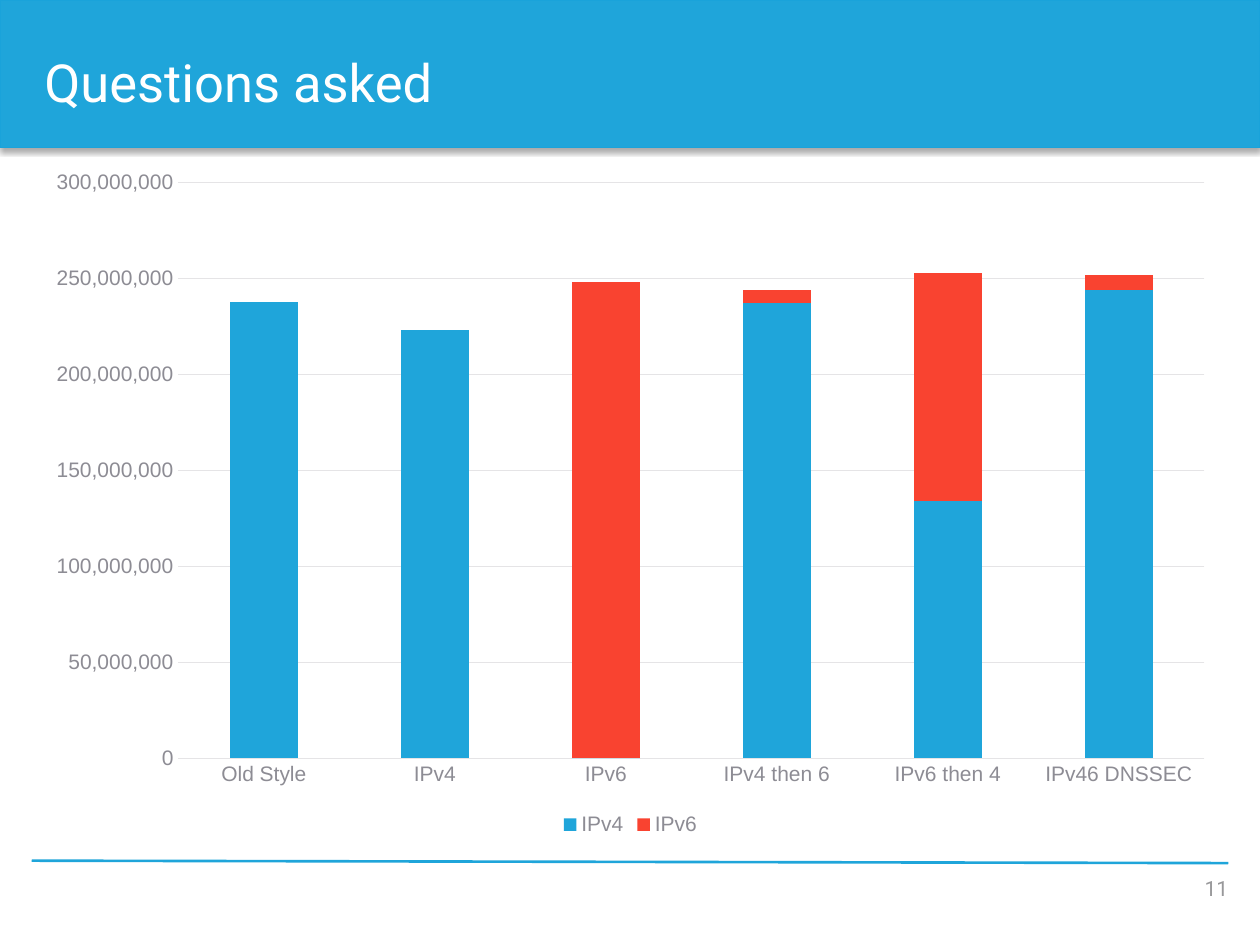
from dataclasses import dataclass

from lxml import etree
from pptx import Presentation
from pptx import util as u
from pptx.chart.data import CategoryChartData
from pptx.dml.color import RGBColor
from pptx.enum import chart as charts, shapes, text
from pptx.oxml import parse_xml
from pptx.oxml.ns import nsdecls, qn


@dataclass(frozen=True)
class Theme:
    blue: RGBColor = RGBColor.from_string("1FA5DA")
    band_edge: RGBColor = RGBColor.from_string("1AA3DA")
    red: RGBColor = RGBColor.from_string("F94330")
    white: RGBColor = RGBColor.from_string("FFFFFF")
    label: RGBColor = RGBColor.from_string("8D8C94")
    grid: RGBColor = RGBColor.from_string("E5E4E6")
    number: RGBColor = RGBColor.from_string("98989A")
    title_size: u.Pt = u.Pt(30)
    small_size: u.Pt = u.Pt(12)
    text_font: str = "Roboto"
    chart_font: str = "Arial"
    thin: u.Pt = u.Pt(0.75)
    rule: u.Pt = u.Pt(1.5)


class SlideBuilder:
    """Holds the theme and the slide being filled; lengths are in centimetres."""

    def __init__(self, slide, theme):
        self.slide = slide
        self.theme = theme

    def style_font(self, font, size, color, name):
        font.size, font.name, font.bold = size, name, False
        font.color.rgb = color

    def style_line(self, line, color, width):
        line.color.rgb = color
        line.width = width

    def band(self, left, top, width, height):
        """Draw the header band with its soft shadow, behind everything else."""
        band = self.slide.shapes.add_shape(
            shapes.MSO_SHAPE.RECTANGLE, *map(u.Cm, (left, top, width, height)))
        band.fill.solid()
        band.fill.fore_color.rgb = self.theme.blue
        self.style_line(band.line, self.theme.band_edge, self.theme.thin)
        band._element.spPr.append(parse_xml(
            f'<a:effectLst {nsdecls("a")}>'
            f'<a:outerShdw blurRad="{u.Pt(3.1)}" dist="{u.Pt(1.8)}" dir="5400000" '
            'algn="t" rotWithShape="0"><a:srgbClr val="000000">'
            '<a:alpha val="35000"/></a:srgbClr></a:outerShdw></a:effectLst>'))
        self.slide.shapes._spTree.insert(2, band._element)

    def rule(self, left, top, right, bottom):
        rule = self.slide.shapes.add_connector(
            shapes.MSO_CONNECTOR.STRAIGHT, *map(u.Cm, (left, top, right, bottom)))
        self.style_line(rule.line, self.theme.blue, self.theme.rule)
        etree.SubElement(rule._element.spPr, qn("a:effectLst"))

    def title(self, words, left, top, width, height):
        title = self.slide.shapes.title
        title.left, title.top, title.width, title.height = map(
            u.Cm, (left, top, width, height))
        frame = title.text_frame
        frame.text = words
        frame.vertical_anchor = text.MSO_ANCHOR.MIDDLE
        paragraph = frame.paragraphs[0]
        paragraph.alignment = text.PP_ALIGN.LEFT
        paragraph.line_spacing = 0.9
        self.style_font(paragraph.runs[0].font, self.theme.title_size,
                        self.theme.white, self.theme.text_font)

    def page_number(self, number, left, top, width, height):
        box = self.slide.shapes.add_textbox(*map(u.Cm, (left, top, width, height)))
        frame = box.text_frame
        frame.word_wrap = True
        frame.vertical_anchor = text.MSO_ANCHOR.MIDDLE
        frame.margin_left = frame.margin_top = frame.margin_bottom = 0
        frame.margin_right = 0
        frame.text = number
        paragraph = frame.paragraphs[0]
        paragraph.alignment = text.PP_ALIGN.RIGHT
        self.style_font(paragraph.runs[0].font, self.theme.small_size,
                        self.theme.number, self.theme.text_font)

    def stacked_columns(self, categories, series, left, top, width, height):
        """Series maps each name to its values and colour."""
        data = CategoryChartData(number_format="#,##0")
        data.categories = categories
        for name, (values, _) in series.items():
            data.add_series(name, values)
        chart = self.slide.shapes.add_chart(
            charts.XL_CHART_TYPE.COLUMN_STACKED,
            *map(u.Cm, (left, top, width, height)), data).chart
        chart.has_title = False
        self.style_font(chart.font, self.theme.small_size,
                        self.theme.label, self.theme.chart_font)
        plot = chart.plots[0]
        plot.gap_width, plot.overlap = 150, 100
        plot.vary_by_categories = False
        for bars, (_, color) in zip(plot.series, series.values()):
            bars.format.fill.solid()
            bars.format.fill.fore_color.rgb = color
        self.style_axes(chart)
        chart.has_legend = True
        chart.legend.position = charts.XL_LEGEND_POSITION.BOTTOM
        chart.legend.include_in_layout = False

    def style_axes(self, chart):
        for axis in (chart.category_axis, chart.value_axis):
            axis.major_tick_mark = axis.minor_tick_mark = charts.XL_TICK_MARK.NONE
        self.style_line(chart.category_axis.format.line, self.theme.grid, self.theme.thin)
        values = chart.value_axis
        values.minimum_scale, values.maximum_scale = 0, 300_000_000
        values.major_unit = 50_000_000
        values.tick_labels.number_format = "#,##0"
        values.tick_labels.number_format_is_linked = False
        values.format.line.fill.background()
        values.has_major_gridlines = True
        self.style_line(values.major_gridlines.format.line, self.theme.grid, self.theme.thin)


def main():
    presentation = Presentation()
    presentation.slide_width, presentation.slide_height = u.Cm(25.4), u.Cm(19.05)
    title_only = presentation.slide_layouts[5]
    theme = Theme()
    builder = SlideBuilder(presentation.slides.add_slide(title_only), theme)

    builder.band(0, 0, 25.4, 2.97)
    builder.title("Questions asked", 0.64, 0.66, 24.15, 2.11)
    builder.rule(0.64, 17.35, 24.76, 17.4)
    categories = ["Old Style", "IPv4", "IPv6", "IPv4 then 6", "IPv6 then 4", "IPv46 DNSSEC"]
    questions = {
        "IPv4": ([238_000_000, 223_000_000, 0, 237_000_000, 134_000_000, 244_000_000],
                 theme.blue),
        "IPv6": ([0, 0, 248_000_000, 7_000_000, 119_000_000, 8_000_000], theme.red),
    }
    builder.stacked_columns(categories, questions, 0.66, 3.18, 24.1, 13.77)
    builder.page_number("11", 18.85, 17.4, 5.91, 1.02)

    presentation.save("out.pptx")


if __name__ == "__main__":
    main()
